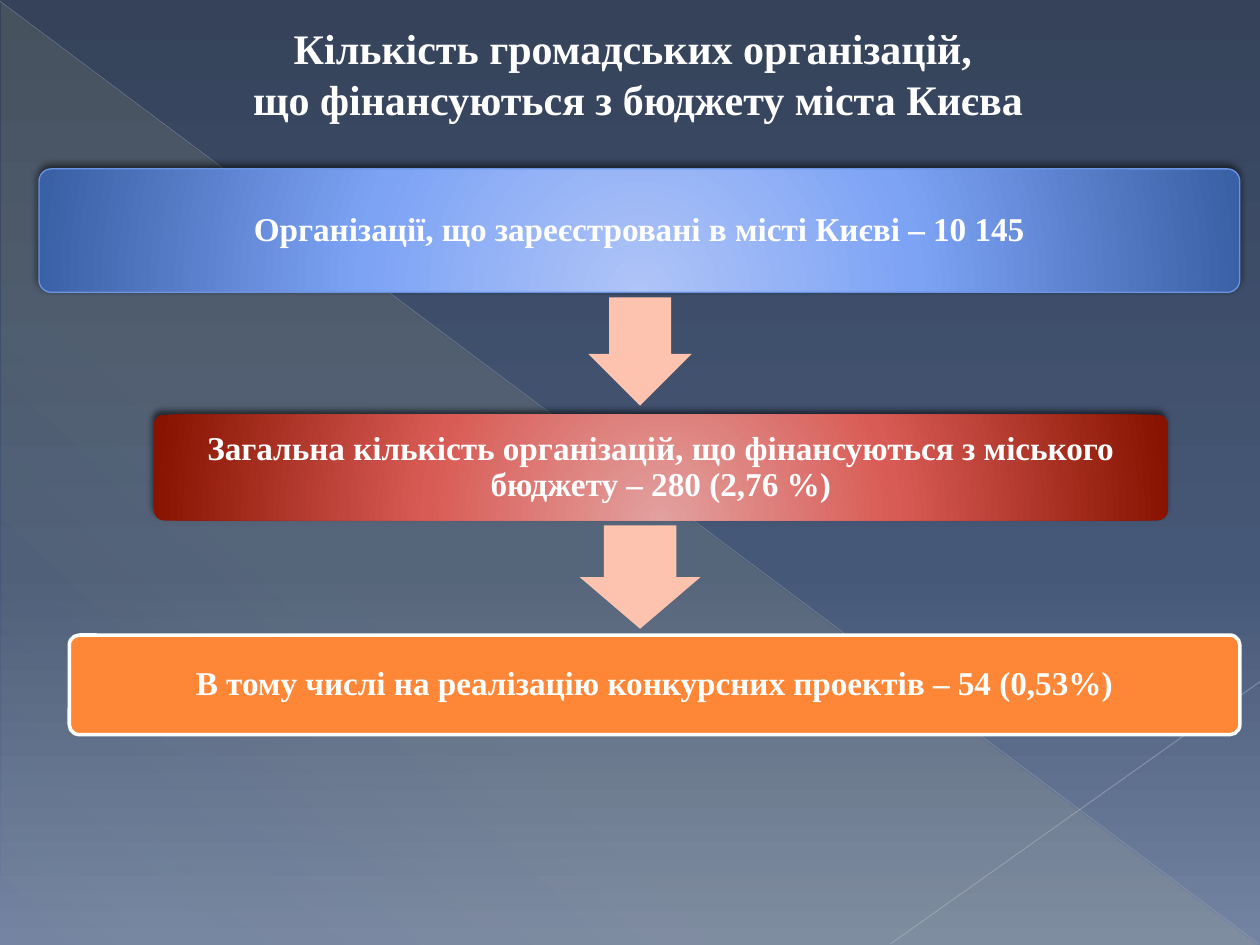
from pptx import Presentation
from pptx.dml.color import RGBColor
from pptx.enum.shapes import MSO_CONNECTOR, MSO_SHAPE
from pptx.enum.text import MSO_ANCHOR, PP_ALIGN
from pptx.oxml import parse_xml
from pptx.oxml.ns import nsdecls, qn
from pptx.util import Inches, Pt

COLORS = {
    "text": "FFFFFF",
    "arrow": "FEC3AE",
    "project": "FE8637",
    "registered_line": "6B95E3",
    "upper_ray": "BABDC4",
    "lower_ray": "C1C4CA",
    "glow": "FFF39D",
    "shadow": "000000",
}
BACKDROP = [(0, "35425A", 100), (60, "465877", 100), (100, "7383A2", 100)]
GLOW = [(0, COLORS["glow"], 10), (70, COLORS["glow"], 8), (100, COLORS["glow"], 1)]
REGISTERED = [(0, "AFC4F7", 100), (46, "7DA3F5", 100), (100, "3A60A6", 100)]
FUNDED = [(0, "E2A19F", 100), (46, "D95B55", 100), (100, "871300", 100)]
LINEAR = '<a:lin ang="{}" scaled="0"/>'
RADIAL = ('<a:path path="circle"><a:fillToRect l="50000" t="155000" '
          'r="50000" b="-55000"/></a:path>')


def rgb(name):
    return RGBColor.from_string(COLORS[name])


def color_xml(color, alpha):
    return f'<a:srgbClr val="{color}"><a:alpha val="{alpha * 1000}"/></a:srgbClr>'


class FlowSlide:
    font_name = "Times New Roman"

    def __init__(self, presentation):
        self.slide = presentation.slides.add_slide(presentation.slide_layouts[5])
        self.shapes = self.slide.shapes

    def apply_gradient(self, fill, properties, stops, direction):
        fill.solid()
        stop_xml = "".join(f'<a:gs pos="{position * 1000}">{color_xml(color, alpha)}</a:gs>'
                           for position, color, alpha in stops)
        gradient = parse_xml(f'<a:gradFill {nsdecls("a")} rotWithShape="1">'
                             f'<a:gsLst>{stop_xml}</a:gsLst>{direction}</a:gradFill>')
        properties.replace(properties.find(qn("a:solidFill")), gradient)

    def background(self, stops, angle):
        fill = self.slide.background.fill
        fill.solid()
        properties = self.slide.element.find(".//" + qn("p:bgPr"))
        self.apply_gradient(fill, properties, stops, LINEAR.format(angle * 60000))

    def format_text(self, frame, lines, size):
        frame.text = "\n".join(lines)
        frame.word_wrap = True
        for paragraph in frame.paragraphs:
            paragraph.alignment = PP_ALIGN.CENTER
            paragraph.font.name = self.font_name
            paragraph.font.size = Pt(size)
            paragraph.font.bold = True
            paragraph.font.color.rgb = rgb("text")

    def title(self, box, lines):
        heading = self.shapes.title
        heading.left, heading.top, heading.width, heading.height = map(Inches, box)
        self.format_text(heading.text_frame, lines, 24)
        heading.text_frame.vertical_anchor = MSO_ANCHOR.TOP

    def shape(self, kind, box):
        shape = self.shapes.add_shape(kind, *map(Inches, box))
        shape.shadow.inherit = False
        shape.line.fill.background()
        return shape

    def glow(self, box, stops, angle):
        triangle = self.shape(MSO_SHAPE.RIGHT_TRIANGLE, box)
        self.apply_gradient(triangle.fill, triangle.element.spPr, stops,
                            LINEAR.format(angle * 60000))

    def ray(self, start, end, color, width, alpha):
        ray = self.shapes.add_connector(MSO_CONNECTOR.STRAIGHT, *map(Inches, start + end))
        ray.line.color.rgb = rgb(color)
        ray.line.width = Pt(width)
        properties = ray.element.spPr
        properties.find(".//" + qn("a:srgbClr")).append(
            parse_xml(f'<a:alpha {nsdecls("a")} val="{alpha * 1000}"/>'))
        properties.append(parse_xml(f'<a:effectLst {nsdecls("a")}/>'))

    def cast_shadow(self, shape):
        shape.element.spPr.find(qn("a:effectLst")).append(parse_xml(
            f'<a:outerShdw {nsdecls("a")} blurRad="{Pt(4)}" dist="{Pt(3)}" '
            f'dir="{245 * 60000}" rotWithShape="0">'
            f'{color_xml(COLORS["shadow"], 60)}</a:outerShdw>'))

    def card(self, box, text, fill=None, stops=None, line=None, line_width=0):
        card = self.shape(MSO_SHAPE.ROUNDED_RECTANGLE, box)
        card.adjustments[0] = 0.1
        if stops:
            self.apply_gradient(card.fill, card.element.spPr, stops, RADIAL)
            self.cast_shadow(card)
        else:
            card.fill.solid()
            card.fill.fore_color.rgb = rgb(fill)
        if line:
            card.line.color.rgb = rgb(line)
            card.line.width = Pt(line_width)
        frame = card.text_frame
        self.format_text(frame, [text], 19)
        frame.paragraphs[0].line_spacing = 0.9
        frame.vertical_anchor = MSO_ANCHOR.MIDDLE
        frame.margin_left = frame.margin_right = Inches(0.11)
        frame.margin_top = frame.margin_bottom = Inches(0.1)

    def down_arrow(self, box):
        arrow = self.shape(MSO_SHAPE.RIGHT_ARROW, box)
        arrow.rotation = 90
        arrow.adjustments[0] = 0.6
        arrow.adjustments[1] = 0.5
        arrow.fill.solid()
        arrow.fill.fore_color.rgb = rgb("arrow")


def main():
    presentation = Presentation()
    presentation.slide_width, presentation.slide_height = Inches(10), Inches(7.5)
    flow = FlowSlide(presentation)
    flow.background(BACKDROP, 90)
    flow.glow((0.01, 0.02, 9.98, 7.48), GLOW, 133)
    flow.ray((0, 0.01), (9.99, 7.49), "upper_ray", 0.39, 35)
    flow.ray((10, 5.41), (7.07, 7.49), "lower_ray", 0.47, 45)
    flow.title((0.61, 0.13, 8.91, 1.21),
               ["Кількість громадських організацій, ",
                "що фінансуються з бюджету міста Києва"])
    flow.card((0.31, 1.34, 9.53, 0.98),
              "Організації, що зареєстровані в місті Києві – 10 145",
              stops=REGISTERED, line="registered_line", line_width=0.75)
    flow.down_arrow((4.65, 2.38, 0.86, 0.82))
    flow.card((1.22, 3.29, 8.05, 0.84),
              "Загальна кількість організацій, що фінансуються з міського "
              "бюджету – 280 (2,76 %)", stops=FUNDED)
    flow.down_arrow((4.67, 4.1, 0.82, 0.96))
    flow.card((0.55, 5.04, 9.29, 0.79),
              "В тому числі на реалізацію конкурсних проектів – 54 (0,53%)",
              fill="project", line="text", line_width=2)
    presentation.save("out.pptx")


if __name__ == "__main__":
    main()
